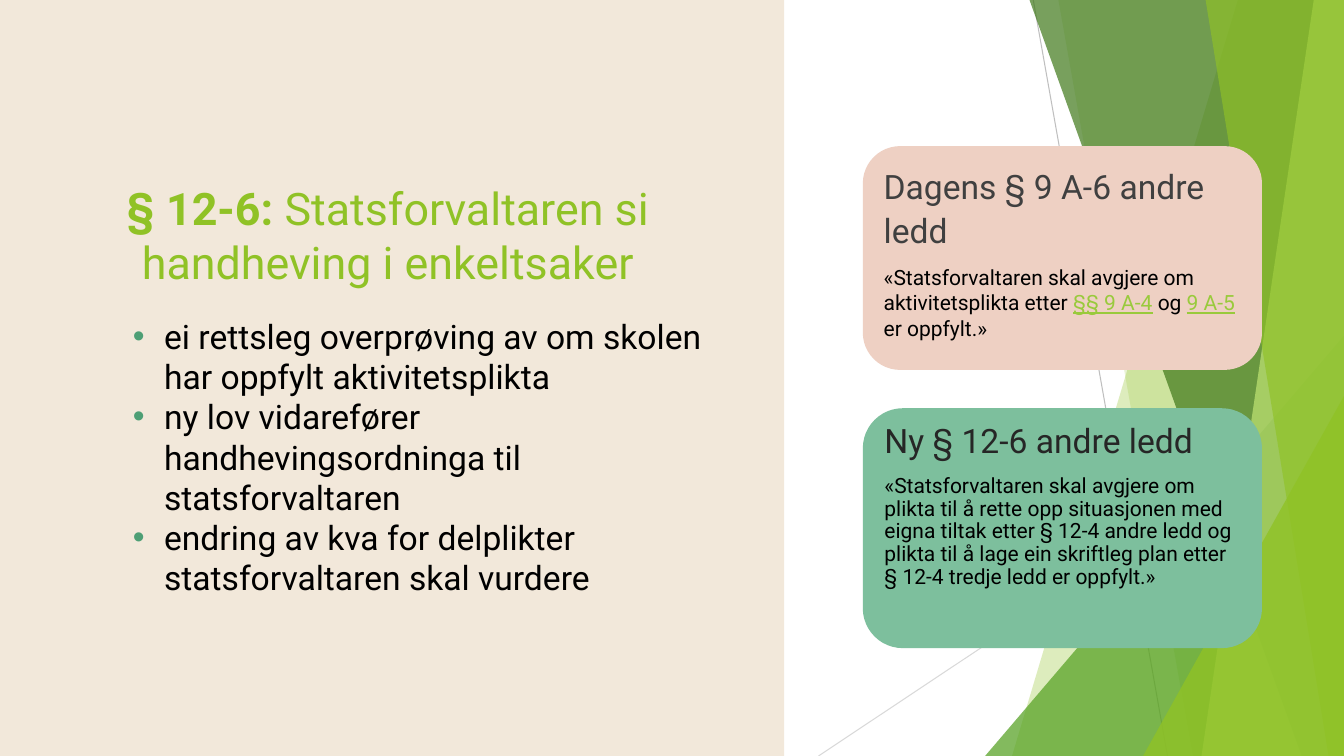
from lxml.etree import SubElement
from pptx import Presentation
from pptx.dml.color import RGBColor
from pptx.enum.shapes import MSO_CONNECTOR as Connector, MSO_SHAPE as Shape
from pptx.enum.text import MSO_ANCHOR as Anchor, PP_ALIGN as Align
from pptx.oxml.ns import qn
from pptx.util import Inches, Pt


def paint(fill, colour):
    fill.solid()
    fill.fore_color.rgb = RGBColor.from_string(colour)


def place(*shares):
    return [round((deck.slide_height if i % 2 else deck.slide_width) * share / 100)
            for i, share in enumerate(shares)]


deck = Presentation()
deck.slide_width, deck.slide_height = Inches(13.33), Inches(7.5)
slide = deck.slides.add_slide(deck.slide_layouts[6])
shapes = slide.shapes

for ends, grey in [((76.88, 0, 86.87, 100), "BFBFBF"),
                   ((100, 53.73, 60.9, 100), "D9D9D9")]:
    ray = shapes.add_connector(Connector.STRAIGHT, *place(*ends))
    ray.line.width = Pt(0.75)
    paint(ray.line.fill, grey)
    SubElement(ray.element.spPr, qn("a:effectLst"))

facets = [
    (92.1, 75.3, 0, "90C226", 30),
    (78.75, 88.75, 0, "90C226", 20),
    (100, 73.3, 44.4, "54A021", 72),
    (76.6, 96.85, 0, "3F7819", 70),
    (97.75, 89.4, 0, "C0E474", 70),
    (89.7, 98.85, 0, "90C226", 65),
    (100, 85.05, 52.4, "90C226", 80),
]
for top_x, bottom_x, peak, green, opacity in facets:
    if top_x == 100:
        facet = shapes.add_shape(Shape.ISOSCELES_TRIANGLE,
                                 *place(bottom_x, peak, 100 - bottom_x, 100 - peak))
        facet.adjustments[0] = 1
    else:
        outline = shapes.build_freeform(*place(top_x, peak))
        outline.add_line_segments([place(100, peak), place(100, 100), place(bottom_x, 100)])
        facet = outline.convert_to_shape()
    paint(facet.fill, green)
    facet.line.fill.background()
    facet.shadow.inherit = False
    tint = facet.element.spPr.find(qn("a:solidFill")).find(qn("a:srgbClr"))
    SubElement(tint, qn("a:alpha"), val=str(opacity * 1000))

panel = shapes.add_shape(Shape.RECTANGLE, *place(0, 0, 58.35, 100))
paint(panel.fill, "F2E8DA")
panel.line.fill.background()
panel.shadow.inherit = False

heading = {"size": Pt(32), "bold": False}
point = {"size": Pt(24)}
quote = {"size": Pt(15)}
link = {"size": Pt(15), "underline": True}
centred = {"alignment": Align.CENTER}
spaced = {"space_before": Pt(10)}
tight = {"space_before": Pt(10), "line_spacing": 0.9}

blocks = [
    ((1.12, 23.2, 55.5, 15.6), None, Anchor.BOTTOM, False, [
        (centred, [("§ 12-6: ", "90C226", {"size": Pt(32), "bold": True}),
                   ("Statsforvaltaren si handheving i enkeltsaker", "90C226", heading)]),
    ]),
    ((64.2, 19.33, 29.7, 29.6), "EED0C3", Anchor.TOP, False, [
        ({"space_before": Pt(10), "line_spacing": 1.1},
         [("Dagens § 9 A-6 andre ledd", "404040", point)]),
        ({"space_before": Pt(10), "space_after": Pt(8)},
         [("«Statsforvaltaren skal avgjere om aktivitetsplikta etter ", "000000", quote),
          ("§§ 9 A-4", "99CA3C", link),
          (" og ", "000000", quote),
          ("9 A-5", "99CA3C", link),
          (" er oppfylt.»", "000000", quote)]),
    ]),
    ((64.2, 54, 29.7, 31.73), "7DBF9D", Anchor.TOP, False, [
        (tight, [("Ny § 12-6 andre ledd", "262626", point)]),
        (tight, [("«Statsforvaltaren skal avgjere om plikta til å rette opp situasjonen "
                  "med eigna tiltak etter § 12-4 andre ledd og plikta til å lage ein "
                  "skriftleg plan etter § 12-4 tredje ledd er oppfylt.»", "000000", quote)]),
    ]),
    ((9.15, 41.07, 45.9, 39.07), None, Anchor.TOP, True, [
        ({}, [(change, "000000", point)]) for change in (
            "ei rettsleg overprøving av om skolen har oppfylt aktivitetsplikta",
            "ny lov vidarefører handhevingsordninga til statsforvaltaren",
            "endring av kva for delplikter statsforvaltaren skal vurdere")
    ]),
]
for area, card_colour, anchor, bulleted, paragraphs in blocks:
    if card_colour:
        block = shapes.add_shape(Shape.ROUNDED_RECTANGLE, *place(*area))
        paint(block.fill, card_colour)
        block.line.fill.background()
        block.shadow.inherit = False
    else:
        block = shapes.add_textbox(*place(*area))
    frame = block.text_frame
    frame.word_wrap = True
    frame.vertical_anchor = anchor
    for number, (layout, pieces) in enumerate(paragraphs):
        paragraph = frame.add_paragraph() if number else frame.paragraphs[0]
        for key, value in ({"alignment": Align.LEFT} | layout).items():
            setattr(paragraph, key, value)
        if bulleted:
            indent = paragraph.alignment is not None and paragraph._p.get_or_add_pPr()
            indent.set("marL", str(Inches(0.31)))
            indent.set("indent", str(-Inches(0.31)))
            SubElement(SubElement(indent, qn("a:buClr")), qn("a:srgbClr"), val="4E9F75")
            SubElement(indent, qn("a:buFont"), typeface="Arial")
            SubElement(indent, qn("a:buChar"), char="•")
        for words, ink, style in pieces:
            run = paragraph.add_run()
            run.text = words
            for key, value in ({"name": "Roboto"} | style).items():
                setattr(run.font, key, value)
            paint(run.font.fill, ink)

deck.save("out.pptx")
